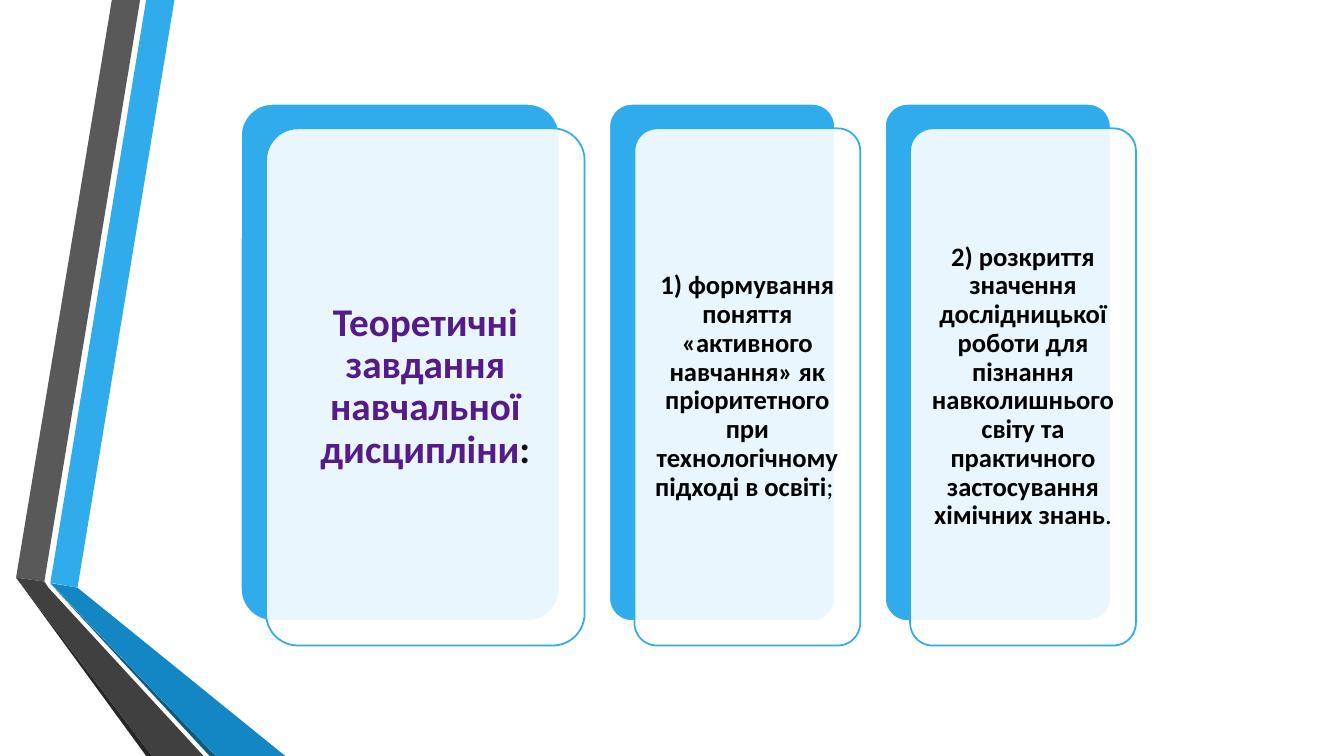
"""Build a slide with three layered cards beside a folded ribbon."""
from lxml.etree import SubElement
from pptx import Presentation
from pptx.dml.color import RGBColor
from pptx.enum.shapes import MSO_SHAPE as Preset
from pptx.enum.text import MSO_ANCHOR as Anchor, PP_ALIGN as Align
from pptx.oxml.ns import qn
from pptx.util import Pt

BLUE = RGBColor(0x30, 0xAC, 0xEC)
MID_BLUE = RGBColor(0x12, 0x87, 0xC3)
DARK_BLUE = RGBColor(0x0C, 0x5A, 0x82)
GREY = RGBColor(0x59, 0x59, 0x59)
DARK_GREY = RGBColor(0x40, 0x40, 0x40)
SHADOW_GREY = RGBColor(0x26, 0x26, 0x26)
PURPLE = RGBColor(0x54, 0x1B, 0x89)
INK = RGBColor(0x0D, 0x0D, 0x0D)
BLACK = RGBColor(0, 0, 0)
WHITE = RGBColor(0xFF, 0xFF, 0xFF)

CARD_TOP, CARD_HEIGHT, CARD_GAP = 74.2, 369.4, 35.6
SHIFT_X, SHIFT_Y = 18, 17.5

deck = Presentation()
deck.slide_width, deck.slide_height = Pt(960), Pt(540)
page = deck.slides.add_slide(deck.slide_layouts[6])

ribbons = [
    (BLUE, [(36, 416.2), (55.4, 419.8), (124.6, 0), (104.4, 0)]),
    (GREY, [(100.1, 0), (79.9, 0), (11.5, 412.6), (31.7, 415.4)]),
    (SHADOW_GREY, [(11.5, 412.6), (104.4, 540), (108.7, 540)]),
    (DARK_BLUE, [(36, 416.9), (149.8, 540), (154.1, 540)]),
    (MID_BLUE, [(36, 416.5), (154.1, 540), (203.8, 540), (55.4, 419.8)]),
    (DARK_GREY, [(145.4, 540), (34.6, 419.8), (31.7, 415.4), (11.5, 412.6), (108.7, 540)]),
]
for color, corners in ribbons:
    points = [(Pt(x), Pt(y)) for x, y in corners]
    builder = page.shapes.build_freeform(*points[0], scale=1.0)
    builder.add_line_segments(points[1:], close=True)
    ribbon = builder.convert_to_shape()
    ribbon.shadow.inherit = False
    ribbon.fill.solid()
    ribbon.fill.fore_color.rgb = color
    ribbon.line.fill.background()


def add_panel(left, top, width, fill, line):
    panel = page.shapes.add_shape(
        Preset.ROUNDED_RECTANGLE, Pt(left), Pt(top), Pt(width), Pt(CARD_HEIGHT))
    panel.adjustments[0] = 0.1
    panel.shadow.inherit = False
    panel.fill.solid()
    panel.fill.fore_color.rgb = fill
    panel.line.color.rgb = line
    panel.line.width = Pt(1.25)
    return panel


cards = [
    (227.5, 28, 8.6, [("Теоретичні завдання навчальної дисципліни", PURPLE, True),
                      (":", INK, True)]),
    (161.3, 19, 5.8, [("1) формування поняття «активного навчання» як пріоритетного "
                       "при технологічному підході в освіті", BLACK, True),
                      ("; ", BLACK, False)]),
    (161.3, 19, 5.8, [("2) розкриття значення дослідницької роботи для пізнання "
                       "навколишнього світу та практичного застосування хімічних знань",
                       BLACK, True),
                      (".", BLACK, False)]),
]
left = 172.1
for width, size, inset, spans in cards:
    add_panel(left, CARD_TOP, width, BLUE, WHITE)
    front = add_panel(left + SHIFT_X, CARD_TOP + SHIFT_Y, width, WHITE, BLUE)
    tint = front.fill._xPr.find(qn("a:solidFill"))[0]
    SubElement(tint, qn("a:alpha"), val="90000")

    box = front.text_frame
    box.word_wrap = True
    box.vertical_anchor = Anchor.MIDDLE
    box.margin_left = box.margin_right = Pt(inset)
    box.margin_top = box.margin_bottom = Pt(inset)
    para = box.paragraphs[0]
    para.alignment = Align.CENTER
    para.line_spacing = 0.9
    for text, color, bold in spans:
        span = para.add_run()
        span.text = text
        span.font.name = "Calibri"
        span.font.size = Pt(size)
        span.font.bold = bold
        span.font.color.rgb = color
    left += width + CARD_GAP

deck.save("out.pptx")
